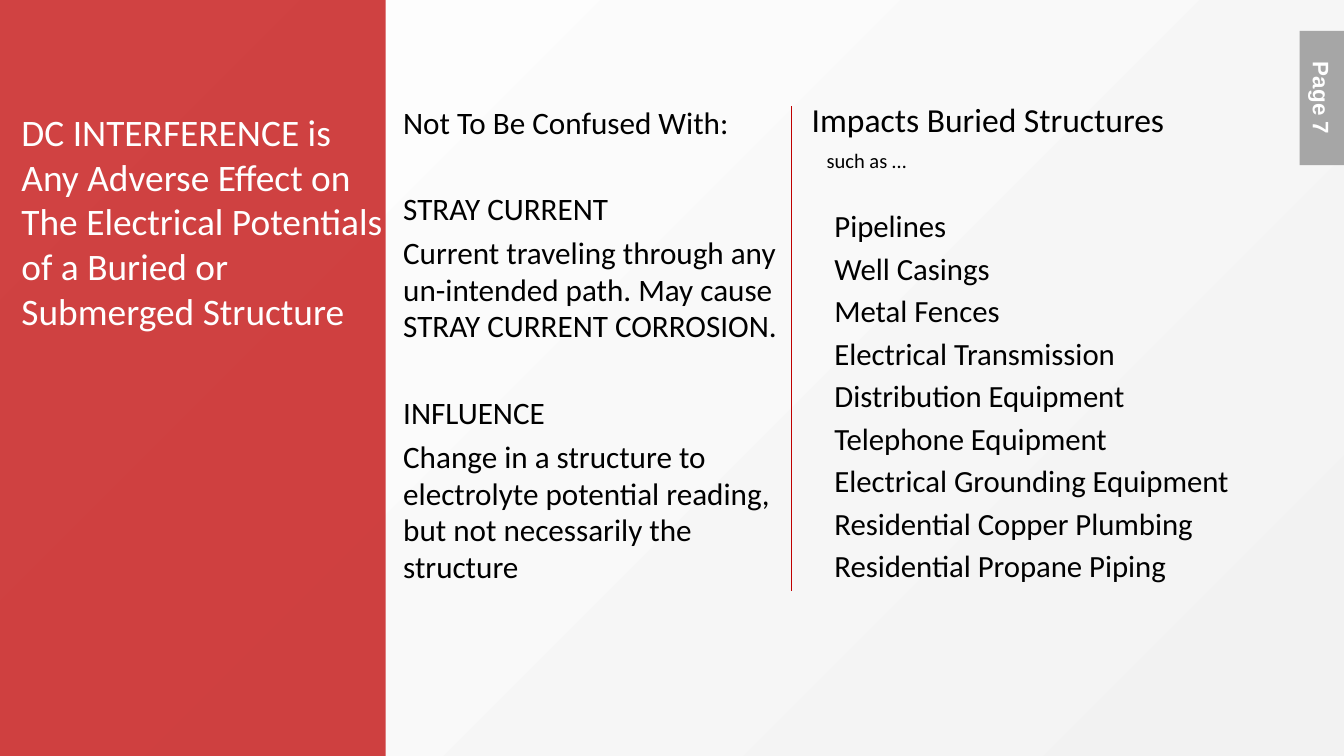
from lxml import etree
from pptx import Presentation
from pptx.dml.color import RGBColor
from pptx.enum.shapes import MSO_CONNECTOR, MSO_SHAPE
from pptx.enum.text import MSO_ANCHOR, PP_ALIGN
from pptx.oxml.ns import qn
from pptx.util import Inches, Pt

COLORS = {"red": "C00000", "gray": "A6A6A6", "white": "FFFFFF",
          "black": "000000", "pale": "F2F2F2"}


def add_text(tf, paragraphs, size, color="black", font="Calibri", bold=False):
    """Fill a frame from (text, paragraph format, optional size) tuples."""
    tf.word_wrap = True
    for i, (text, fmt, *own_size) in enumerate(paragraphs):
        p = tf.paragraphs[0] if i == 0 else tf.add_paragraph()
        p.text = text
        for name, value in fmt.items():
            setattr(p, name, value)
        for r in p.runs:
            r.font.name = font
            r.font.size = Pt(own_size[0] if own_size else size)
            r.font.bold = bold
            r.font.color.rgb = RGBColor.from_string(COLORS[color])


def add_box(left, top, width, height, insets=(0.08, 0.04, 0.07, 0.04)):
    tf = s.shapes.add_textbox(*map(Inches, (left, top, width, height))).text_frame
    for side, inset in zip(("left", "top", "right", "bottom"), insets):
        setattr(tf, f"margin_{side}", Inches(inset))
    return tf


prs = Presentation()
prs.slide_width, prs.slide_height = Inches(10), Inches(10 * 9 / 16)
s = prs.slides.add_slide(prs.slide_layouts[6])

# Background
fill = s.background.fill
fill.gradient()
fill.gradient_angle = 315
for stop, color, position in zip(fill.gradient_stops, ("white", "pale"), (0, 1)):
    stop.color.rgb = RGBColor.from_string(COLORS[color])
    stop.position = position

# Page tab and red side panel
panels = {}
for name, color, place in (
        ("tab", "gray", (9.67, 0.23, 0.33, 1)),
        ("side", "red", (0, 0, 2.87, prs.slide_height.inches))):
    sp = s.shapes.add_shape(MSO_SHAPE.RECTANGLE, *map(Inches, place))
    sp.shadow.inherit = False
    sp.fill.solid()
    sp.fill.fore_color.rgb = RGBColor.from_string(COLORS[color])
    sp.line.fill.background()
    panels[name] = sp

tf = panels["tab"].text_frame
tf.vertical_anchor = MSO_ANCHOR.MIDDLE
add_text(tf, [("Page 7", {"alignment": PP_ALIGN.CENTER})], 12, "white", "Arial", True)
panels["tab"].element.txBody.find(qn("a:bodyPr")).set("vert", "vert")

side_color = next(panels["side"].element.spPr.iter(qn("a:srgbClr")))
etree.SubElement(side_color, qn("a:alpha")).set("val", "74000")

# Title
add_text(add_box(0.08, 0.77, 2.84, 2.25), [
    ("DC INTERFERENCE is\vAny Adverse Effect on The Electrical Potentials "
     "of a Buried or Submerged Structure", {})], 20, "white")

# Middle column
line = {"line_spacing": 0.98}
heading = {**line, "space_before": Pt(26.8)}
definition = {**line, "space_before": Pt(3.8)}
add_text(add_box(2.92, 0.74, 2.95, 3.79), [
    ("Not To Be Confused With:", line),
    ("STRAY CURRENT", heading),
    ("Current traveling through any un-intended path. "
     "May cause STRAY CURRENT CORROSION.", definition),
    ("INFLUENCE", heading),
    ("Change in a structure to electrolyte potential reading, "
     "but not necessarily the structure", definition)], 16.7)

# Right column
tf = add_box(5.96, 0.73, 4.42, 3.58)
add_text(tf, [("Impacts Buried Structures", {"line_spacing": 0.9}),
              ("such as …", {"line_spacing": 0.9, "space_before": Pt(6)}, 11)], 18)
tf.paragraphs[1]._p.get_or_add_pPr().set("marL", str(Inches(0.11)))

structures = ["Pipelines", "Well Casings", "Metal Fences", "Electrical Transmission",
              "Distribution Equipment", "Telephone Equipment",
              "Electrical Grounding Equipment", "Residential Copper Plumbing",
              "Residential Propane Piping"]
tf = add_box(5.42, 1.52, 4.58, 3, insets=(0.1, 0.05, 0.1, 0.05))
add_text(tf, [(name, {"line_spacing": 0.9, "space_before": Pt(5 if i else 0)})
              for i, name in enumerate(structures)], 16.5)
for p in tf.paragraphs:
    p._p.get_or_add_pPr().set("marL", str(Inches(0.69)))

# Column divider
divider = s.shapes.add_connector(MSO_CONNECTOR.STRAIGHT,
                                 *map(Inches, (5.89, 0.79, 5.89, 4.4)))
divider.line.color.rgb = RGBColor.from_string(COLORS["red"])
divider.line.width = Pt(0.75)
etree.SubElement(divider.element.spPr, qn("a:effectLst"))

prs.save("out.pptx")
